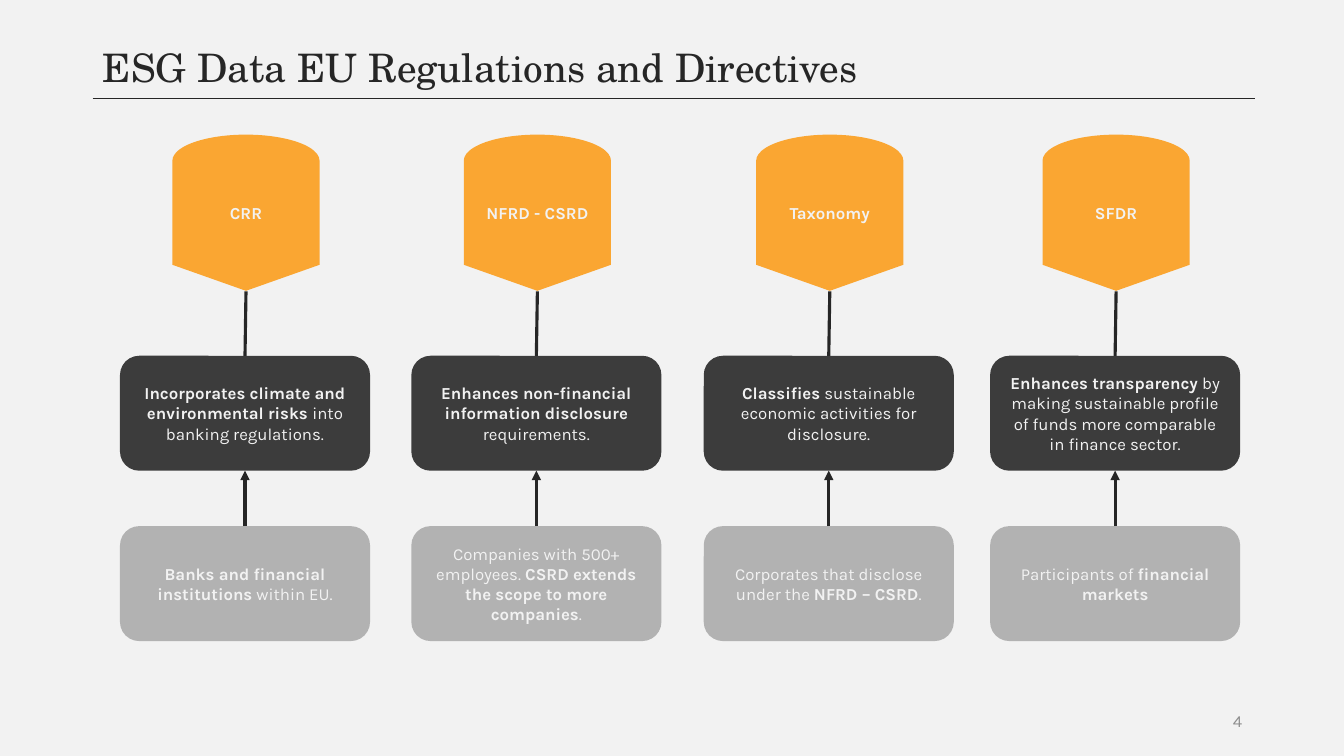
from pptx import Presentation
from pptx.dml.color import RGBColor
from pptx.enum.shapes import MSO_CONNECTOR, MSO_SHAPE
from pptx.enum.text import MSO_ANCHOR, PP_ALIGN
from pptx.oxml.ns import qn
from pptx.util import Inches, Pt
from lxml import etree

COLORS = {
    "background": "F2F2F2",
    "ink": "262626",
    "regulation": "FAA632",
    "purpose": "3C3C3C",
    "scope": "B2B2B2",
    "light": "F2F2F2",
    "page": "8E8E8E",
}
BADGE_LENGTH, BADGE_WIDTH, BADGE_MIDDLE = 1.55, 1.46, 2.11
BADGE_TIP = 2.89
BOX_WIDTH, BOX_HEIGHT = 2.48, 1.14
PURPOSE_TOP, SCOPE_TOP = 3.53, 5.22

# Column centre, regulation, purpose runs and scope runs; each run is (text, bold)
REGULATIONS = [
    (2.43, "CRR",
     [("Incorporates climate and environmental risks ", True),
      ("into banking regulations.", False)],
     [("Banks and financial institutions", True), (" within EU.", False)]),
    (5.32, "NFRD - CSRD",
     [("Enhances non-financial information disclosure ", True),
      ("requirements.", False)],
     [("Companies with 500+ employees. ", False),
      ("CSRD extends the scope to more companies", True), (".", False)]),
    (8.22, "Taxonomy",
     [("Classifies", True),
      (" sustainable economic activities for disclosure.", False)],
     [("Corporates that disclose under the ", False),
      ("NFRD – CSRD", True), (".", False)]),
    (11.06, "SFDR",
     [("Enhances transparency", True),
      (" by making sustainable profile of funds more comparable in finance sector.", False)],
     [("Participants of ", False), ("financial markets", True)]),
]


def add_block(preset, left, top, width, height, color, runs):
    """Add a filled shape with centred text made of (text, bold) runs."""
    block = slide.shapes.add_shape(
        preset, Inches(left), Inches(top), Inches(width), Inches(height))
    block.shadow.inherit = False
    block.fill.solid()
    block.fill.fore_color.rgb = RGBColor.from_string(COLORS[color])
    block.line.fill.background()
    frame = block.text_frame
    frame.word_wrap = True
    frame.vertical_anchor = MSO_ANCHOR.MIDDLE
    paragraph = frame.paragraphs[0]
    paragraph.alignment = PP_ALIGN.CENTER
    for text, bold in runs:
        run = paragraph.add_run()
        run.text = text
        run.font.name = "Karla"
        run.font.size = Pt(12)
        run.font.bold = bold
        run.font.color.rgb = RGBColor.from_string(COLORS["light"])
    return block


def add_line(x1, y1, x2, y2, weight, arrow=False):
    line = slide.shapes.add_connector(
        MSO_CONNECTOR.STRAIGHT, Inches(x1), Inches(y1), Inches(x2), Inches(y2))
    line.line.color.rgb = RGBColor.from_string(COLORS["ink"])
    line.line.width = Pt(weight)
    if arrow:
        outline = line.line._get_or_add_ln()
        etree.SubElement(outline, qn("a:tailEnd"), type="triangle")
    etree.SubElement(line._element.spPr, qn("a:effectLst"))


prs = Presentation()
prs.slide_width, prs.slide_height = Inches(13.33), Inches(7.5)
slide = prs.slides.add_slide(prs.slide_layouts[5])
slide.background.fill.solid()
slide.background.fill.fore_color.rgb = RGBColor.from_string(COLORS["background"])

# Title and rule
title = slide.shapes.title
title.left, title.top = Inches(0.92), Inches(0.4)
title.width, title.height = Inches(11.5), Inches(0.59)
title.text_frame.vertical_anchor = MSO_ANCHOR.MIDDLE
heading = title.text_frame.paragraphs[0]
heading.alignment = PP_ALIGN.LEFT
heading.line_spacing = 0.9
heading_run = heading.add_run()
heading_run.text = "ESG Data EU Regulations and Directives"
heading_run.font.name = "TeX Gyre Schola"
heading_run.font.size = Pt(28)
heading_run.font.color.rgb = RGBColor.from_string(COLORS["ink"])
add_line(0.92, 0.98, 12.45, 0.98, 1)

# One column per regulation
for center, regulation, purpose, scope in REGULATIONS:
    add_line(center + 0.01, BADGE_TIP, center, PURPOSE_TOP, 2.25)
    badge = add_block(
        MSO_SHAPE.FLOWCHART_DISPLAY, center + 0.01 - BADGE_LENGTH / 2,
        BADGE_MIDDLE - BADGE_WIDTH / 2, BADGE_LENGTH, BADGE_WIDTH,
        "regulation", [(regulation, True)])
    badge.rotation = 270
    badge.text_frame._txBody.bodyPr.set("vert", "vert")
    for top, color, runs in ((PURPOSE_TOP, "purpose", purpose),
                             (SCOPE_TOP, "scope", scope)):
        box_left = center - BOX_WIDTH / 2
        add_block(MSO_SHAPE.ROUNDED_RECTANGLE, box_left, top,
                  BOX_WIDTH, BOX_HEIGHT, color, runs)
    add_line(center, SCOPE_TOP, center, PURPOSE_TOP + BOX_HEIGHT, 2.25, arrow=True)

# Page number
page = slide.shapes.add_textbox(Inches(9.42), Inches(6.95), Inches(3), Inches(0.4))
page.text_frame.word_wrap = True
page.text_frame.vertical_anchor = MSO_ANCHOR.MIDDLE
page_line = page.text_frame.paragraphs[0]
page_line.alignment = PP_ALIGN.RIGHT
page_run = page_line.add_run()
page_run.text = "4"
page_run.font.name = "Karla"
page_run.font.size = Pt(12)
page_run.font.color.rgb = RGBColor.from_string(COLORS["page"])

prs.save("out.pptx")
